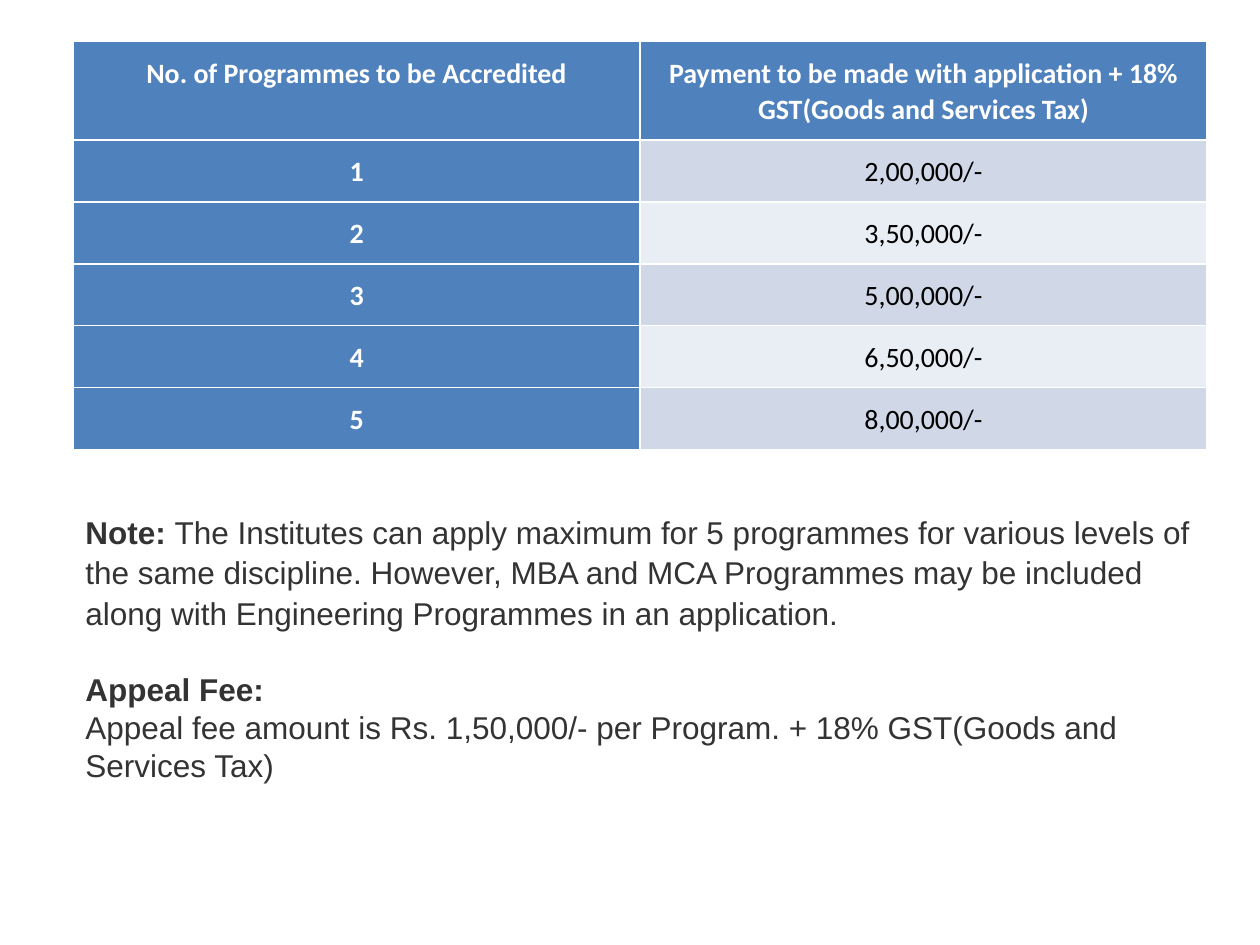
"""Build the accreditation fee slide."""
from pptx import Presentation
from pptx.dml.color import RGBColor
from pptx.enum.text import MSO_AUTO_SIZE, PP_ALIGN
from pptx.util import Inches, Pt

CENTER = PP_ALIGN.CENTER
GROW = MSO_AUTO_SIZE.SHAPE_TO_FIT_TEXT
BLUE = RGBColor(0x4F, 0x81, 0xBD)
BANDS = (RGBColor(0xD0, 0xD8, 0xE8), RGBColor(0xE9, 0xED, 0xF4))
WHITE = RGBColor(0xFF, 0xFF, 0xFF)
BLACK = RGBColor(0, 0, 0)
GREY = RGBColor(0x33, 0x33, 0x33)

FEES = [
    ("No. of Programmes to be Accredited",
     "Payment to be made with application + 18% GST(Goods and Services Tax)"),
    ("1", "2,00,000/-"),
    ("2", "3,50,000/-"),
    ("3", "5,00,000/-"),
    ("4", "6,50,000/-"),
    ("5", "8,00,000/-"),
]
NOTES = [
    ([("Note: ", True),
      ("The Institutes can apply maximum for 5 programmes for various levels of "
       "the same discipline. However, MBA and MCA Programmes may be included "
       "along with Engineering Programmes in an application.", False)], 1.07, 0),
    ([("Appeal Fee:", True)], 1.07, 20.5),
    ([("Appeal fee amount is Rs. 1,50,000/- per Program. + 18% GST(Goods and "
       "Services Tax)", False)], 1.0, 0),
]


def add_text(p, text, size=18, font="Arial", color=GREY, bold=False):
    """Append a formatted run to a paragraph."""
    r = p.add_run()
    r.text = text
    r.font.size = Pt(size)
    r.font.name = font
    r.font.color.rgb = color
    r.font.bold = bold


def fill_cell(cell, text, fill, color, bold):
    """Set the fill, margins and centred text of a table cell."""
    cell.fill.solid()
    cell.fill.fore_color.rgb = fill
    cell.margin_left = cell.margin_right = Inches(0.1)
    cell.margin_top = cell.margin_bottom = Inches(0.1)
    p = cell.text_frame.paragraphs[0]
    p.alignment = CENTER
    p.line_spacing = 1.07
    add_text(p, text, size=16, font="Calibri", color=color, bold=bold)


def add_fee_table(s):
    """Add the table of fees by number of programmes."""
    table = s.shapes.add_table(len(FEES), 2, Inches(0.58), Inches(0.33),
                               Inches(9), Inches(3.23)).table
    table.first_col = True
    for i, row in enumerate(FEES):
        table.rows[i].height = Inches(0.49 if i else 0.78)
        for j, text in enumerate(row):
            heading = i == 0 or j == 0
            fill = BLUE if heading else BANDS[(i - 1) % 2]
            fill_cell(table.cell(i, j), text, fill,
                      WHITE if heading else BLACK, heading)


def add_notes(s):
    """Add the text box with the note and the appeal fee."""
    sp = s.shapes.add_textbox(Inches(0.58), Inches(4), Inches(9.17), Inches(2.29))
    tf = sp.text_frame
    tf.word_wrap = True
    tf.auto_size = GROW
    for i, (runs, spacing, before) in enumerate(NOTES):
        p = tf.add_paragraph() if i else tf.paragraphs[0]
        p.line_spacing = spacing
        p.space_before = Pt(before)
        for text, bold in runs:
            add_text(p, text, bold=bold)


def main():
    """Create the slide and save it."""
    prs = Presentation()
    prs.slide_width = Inches(10)
    prs.slide_height = Inches(7.5)
    s = prs.slides.add_slide(prs.slide_layouts[6])
    add_fee_table(s)
    add_notes(s)
    prs.save("out.pptx")


if __name__ == "__main__":
    main()
